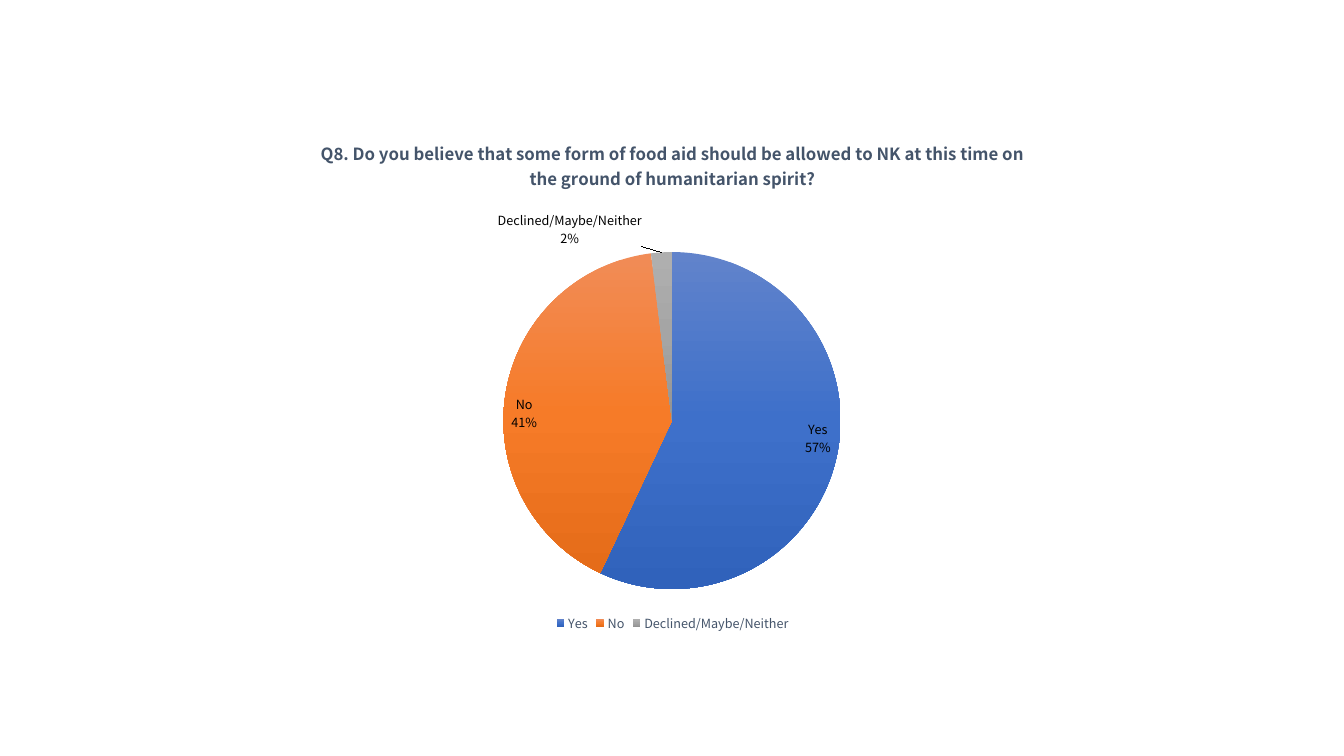
from copy import deepcopy

from lxml import etree
from pptx import Presentation
from pptx.chart.data import CategoryChartData
from pptx.dml.color import RGBColor
from pptx.enum.chart import XL_CHART_TYPE, XL_LABEL_POSITION, XL_LEGEND_POSITION
from pptx.oxml.ns import qn
from pptx.util import Inches, Pt

PIE = XL_CHART_TYPE.PIE
BOTTOM = XL_LEGEND_POSITION.BOTTOM
INSIDE_END = XL_LABEL_POSITION.INSIDE_END
OUTSIDE_END = XL_LABEL_POSITION.OUTSIDE_END

QUESTION = ("Q8. Do you believe that some form of food aid should be allowed to NK "
            "at this time on the ground of humanitarian spirit?")
ANSWERS = {"Yes": 57, "No": 41, "Declined/Maybe/Neither": 2}
GRADIENTS = [("6183CB", "3E70CA", "3062BB"),
             ("F18C57", "F67B28", "E56C19"),
             ("AFAFAF", "A5A5A5", "939393")]


def color(value):
    return RGBColor.from_string(value)


def manual_layout(**settings):
    layout = etree.Element(qn("c:layout"))
    manual = etree.SubElement(layout, qn("c:manualLayout"))
    for tag, value in settings.items():
        etree.SubElement(manual, qn(f"c:{tag}")).set("val", str(value))
    return layout


class SurveySlide:
    font_name = "Noto Sans CJK KR"
    ink = "44546A"
    label_ink = "000000"

    def __init__(self, presentation):
        self.slide = presentation.slides.add_slide(presentation.slide_layouts[6])

    def style(self, font, size, ink, bold=False):
        font.name = self.font_name
        font.size = Pt(size)
        font.bold = bold
        font.color.rgb = color(ink)

    def pie(self, question, answers, left, top, width, height):
        data = CategoryChartData()
        data.categories = list(answers)
        data.add_series(question, list(answers.values()))
        chart = self.slide.shapes.add_chart(
            PIE, Inches(left), Inches(top), Inches(width), Inches(height), data).chart
        self.style(chart.font, 10, self.label_ink)
        chart.plots[0].vary_by_categories = True

        # Place the circle inside the chart
        plot_area = chart.element.xpath(".//c:plotArea")[0]
        for layout in plot_area.findall(qn("c:layout")):
            plot_area.remove(layout)
        plot_area.insert(0, manual_layout(
            layoutTarget="inner", xMode="edge", yMode="edge",
            x=0.315, y=0.256, w=0.369, h=0.653))
        return chart

    def title(self, chart, text):
        chart.has_title = True
        chart.chart_title.include_in_layout = False
        run = chart.chart_title.text_frame.paragraphs[0].add_run()
        run.text = text
        self.style(run.font, 12, self.ink, bold=True)

    def legend(self, chart):
        chart.has_legend = True
        chart.legend.position = BOTTOM
        chart.legend.include_in_layout = False
        self.style(chart.legend.font, 9, self.ink)

    def gradient(self, chart, index, shades):
        fill = chart.plots[0].series[0].points[index].format.fill
        fill.gradient()
        fill.gradient_angle = 270
        stop_list = chart.element.xpath(".//a:gsLst")[-1]
        stop_list.append(deepcopy(stop_list[-1]))
        for stop, shade, position in zip(fill.gradient_stops, shades, (0, 0.5, 1)):
            stop.color.rgb = color(shade)
            stop.position = position

    def labels(self, chart):
        labels = chart.plots[0].series[0].data_labels
        labels.show_value = False
        labels.show_category_name = True
        labels.show_percentage = True
        labels.number_format = "0%"
        labels.number_format_is_linked = False
        labels.position = INSIDE_END
        self.style(labels.font, 9, self.label_ink)

    def outer_label(self, chart, index, shift_x, shift_y):
        label = chart.plots[0].series[0].points[index].data_label
        self.style(label.font, 9, self.label_ink)
        label.position = OUTSIDE_END
        node = chart.element.xpath(f".//c:dLbl[c:idx/@val='{index}']")[0]
        node.insert(1, manual_layout(x=shift_x, y=shift_y))
        for tag, shown in (("showVal", "0"), ("showCatName", "1"), ("showPercent", "1")):
            node.find(qn(f"c:{tag}")).set("val", shown)


def main():
    presentation = Presentation()
    presentation.slide_width = Inches(13.33)
    presentation.slide_height = Inches(7.5)
    survey = SurveySlide(presentation)

    # Survey answers
    answer_pie = survey.pie(QUESTION, ANSWERS, 2.14, 1.19, 9.06, 5.12)
    survey.title(answer_pie, QUESTION)
    survey.legend(answer_pie)
    for index, shades in enumerate(GRADIENTS):
        survey.gradient(answer_pie, index, shades)

    # Labels, with the thin slice labelled outside
    survey.labels(answer_pie)
    survey.outer_label(answer_pie, 2, -0.1, 0)

    presentation.save("out.pptx")


if __name__ == "__main__":
    main()
